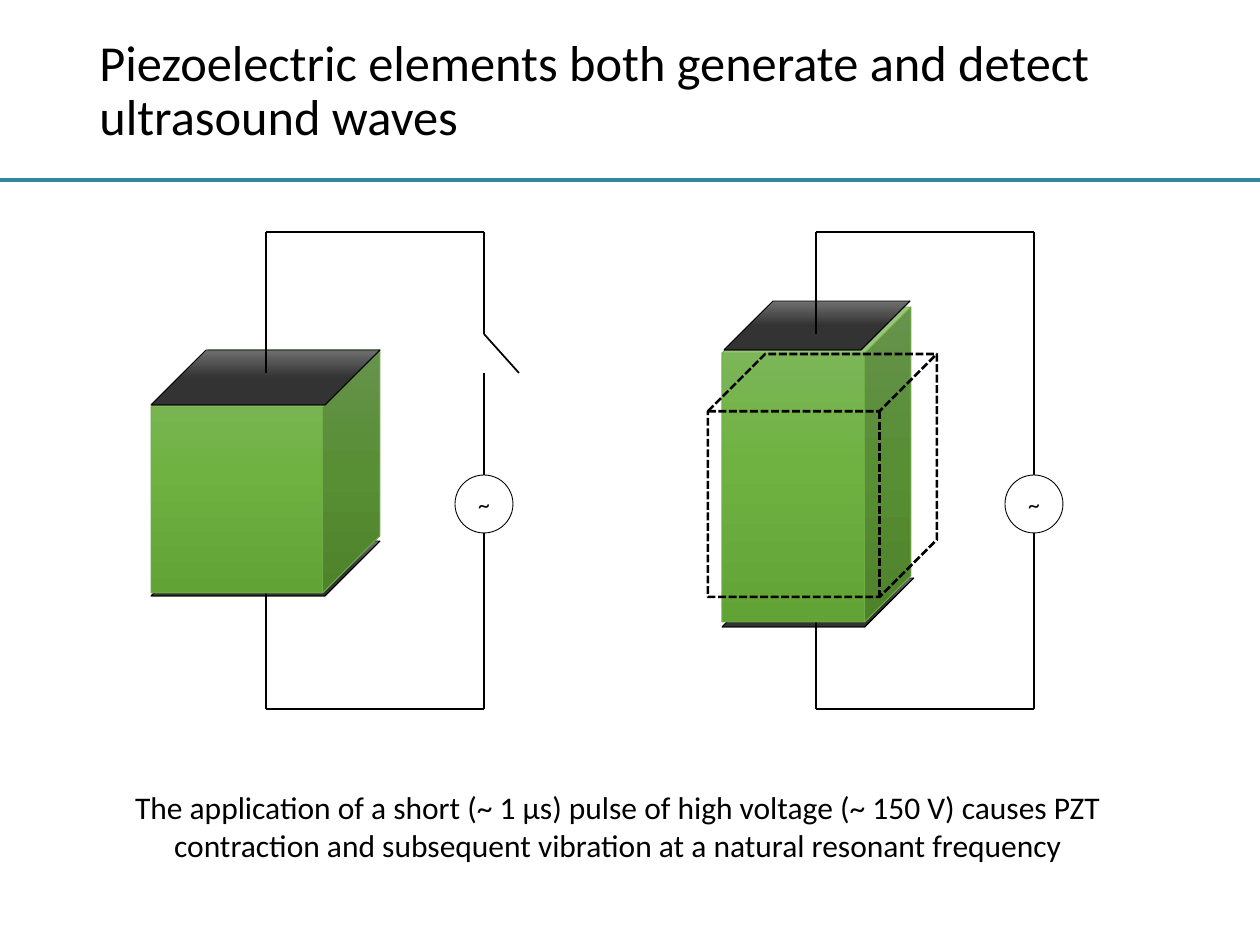
from copy import deepcopy
from dataclasses import dataclass

from lxml import etree
from pptx import Presentation
from pptx.dml.color import RGBColor
from pptx.enum.dml import MSO_LINE
from pptx.enum.shapes import MSO_CONNECTOR, MSO_SHAPE
from pptx.enum.text import MSO_ANCHOR, PP_ALIGN
from pptx.oxml.ns import qn
from pptx.util import Emu, Pt

CUBE, OVAL = MSO_SHAPE.CUBE, MSO_SHAPE.OVAL
STRAIGHT = MSO_CONNECTOR.STRAIGHT
DASH = MSO_LINE.SQUARE_DOT
TOP, MIDDLE = MSO_ANCHOR.TOP, MSO_ANCHOR.MIDDLE
LEFT, CENTER = PP_ALIGN.LEFT, PP_ALIGN.CENTER

PX = 914400 // 126
FONT = "Calibri"
COLORS = {
    "black": "000000", "white": "FFFFFF", "rule": "31859C", "edge": "70AD47",
    "green1": "81B861", "green2": "6FB242", "green3": "62A336", "dark": "4B4B4B",
}
CRYSTAL = ("green1", "green2", "green3")
ELECTRODE = ("dark", "black", "black")

WIRE_TOP, WIRE_BOTTOM = 232, 709
SWITCH_TOP, SWITCH_BOTTOM = 334, 373
SOURCE_TOP, SOURCE_SIZE = 475, 58
LOOP_WIDTH = 218


@dataclass
class Box:
    x: int
    y: int
    w: int
    h: int

    def emu(self) -> list:
        return [Emu(v * PX) for v in (self.x, self.y, self.w, self.h)]


@dataclass
class Element:
    bottom: Box
    body: Box
    top: Box
    depth: float
    lead_x: int
    lead_top: int
    lead_bottom: int
    closed: bool


ELEMENTS = [
    Element(Box(151, 541, 229, 55), Box(151, 350, 229, 243),
            Box(151, 350, 229, 55), 0.25, 266, 373, 592, False),
    Element(Box(722, 578, 192, 49), Box(722, 307, 189, 315),
            Box(724, 301, 186, 49), 0.244, 816, 334, 592, True),
]
REST_OUTLINE = Box(708, 354, 229, 243)


def rgb(name: str) -> RGBColor:
    return RGBColor.from_string(COLORS[name])


def add_line(s, x1: int, y1: int, x2: int, y2: int,
             color: str = "black", width: float = 1) -> None:
    c = s.shapes.add_connector(STRAIGHT, *[Emu(v * PX) for v in (x1, y1, x2, y2)])
    c.line.color.rgb = rgb(color)
    c.line.width = Pt(width)
    etree.SubElement(c._element.spPr, qn("a:effectLst"))


def add_outlined(s, kind, box: Box, color: str = "black", width: float = 0.5):
    sp = s.shapes.add_shape(kind, *box.emu())
    sp.shadow.inherit = False
    sp.line.color.rgb = rgb(color)
    sp.line.width = Pt(width)
    return sp


def add_block(s, box: Box, depth: float, colors: tuple, edge: str) -> None:
    sp = add_outlined(s, CUBE, box, edge)
    sp.adjustments[0] = depth
    sp.fill.gradient()
    sp.fill.gradient_angle = 270
    stops = sp._element.spPr.find(".//" + qn("a:gsLst"))
    stops.append(deepcopy(stops[-1]))
    for stop, color, pos in zip(sp.fill.gradient_stops, colors, (0, 0.5, 1)):
        stop.color.rgb = rgb(color)
        stop.position = pos


def write(sp, text: str, size: float, align, anchor, spacing: float = 1) -> None:
    tf = sp.text_frame
    p = tf.paragraphs[0]
    r = p.add_run()
    r.text = text
    r.font.color.rgb = rgb("black")
    formats = {
        tf: {"word_wrap": True, "vertical_anchor": anchor},
        p: {"alignment": align, "line_spacing": spacing},
        r.font: {"name": FONT, "size": Pt(size)},
    }
    for target, values in formats.items():
        for name, value in values.items():
            setattr(target, name, value)


def add_source(s, x: int) -> None:
    box = Box(x - SOURCE_SIZE // 2, SOURCE_TOP, SOURCE_SIZE, SOURCE_SIZE)
    sp = add_outlined(s, OVAL, box)
    sp.fill.solid()
    sp.fill.fore_color.rgb = rgb("white")
    write(sp, "~", 13.5, CENTER, MIDDLE)


def add_circuit(s, e: Element) -> None:
    x, far = e.lead_x, e.lead_x + LOOP_WIDTH
    add_line(s, x, e.lead_top, x, WIRE_TOP)
    add_line(s, far, WIRE_TOP, x, WIRE_TOP)
    add_line(s, far, SWITCH_TOP, far, WIRE_TOP)
    if e.closed:
        add_line(s, far, SOURCE_TOP, far, SWITCH_TOP)
    else:
        add_line(s, far + 35, SWITCH_BOTTOM, far, SWITCH_TOP)
        add_line(s, far, SOURCE_TOP, far, SWITCH_BOTTOM)
    add_source(s, far)
    add_line(s, far, WIRE_BOTTOM, far, SOURCE_TOP + SOURCE_SIZE)
    add_line(s, far, WIRE_BOTTOM, x, WIRE_BOTTOM)


def add_element(s, e: Element) -> None:
    add_block(s, e.bottom, 1, ELECTRODE, "black")
    add_line(s, e.lead_x, WIRE_BOTTOM, e.lead_x, e.lead_bottom)
    add_block(s, e.body, e.depth, CRYSTAL, "edge")
    add_block(s, e.top, 1, ELECTRODE, "black")
    add_circuit(s, e)


def main() -> None:
    prs = Presentation()
    prs.slide_width, prs.slide_height = Emu(1260 * PX), Emu(945 * PX)
    s = prs.slides.add_slide(prs.slide_layouts[6])

    title = s.shapes.add_textbox(*Box(87, 28, 1086, 128).emu())
    write(title, "Piezoelectric elements both generate and detect ultrasound waves",
          28.8, LEFT, MIDDLE, 0.9)
    add_line(s, 1260, 180, 0, 180, "rule", 2.25)

    for e in ELEMENTS:
        add_element(s, e)
    rest = add_outlined(s, CUBE, REST_OUTLINE, width=1.5)
    rest.fill.background()
    rest.line.dash_style = DASH

    caption = s.shapes.add_textbox(*Box(63, 782, 1110, 89).emu())
    write(caption, "The application of a short (~ 1 μs) pulse of high voltage (~ 150 V) "
          "causes PZT contraction and subsequent vibration at a natural resonant frequency",
          18, CENTER, TOP)
    prs.save("out.pptx")


if __name__ == "__main__":
    main()
